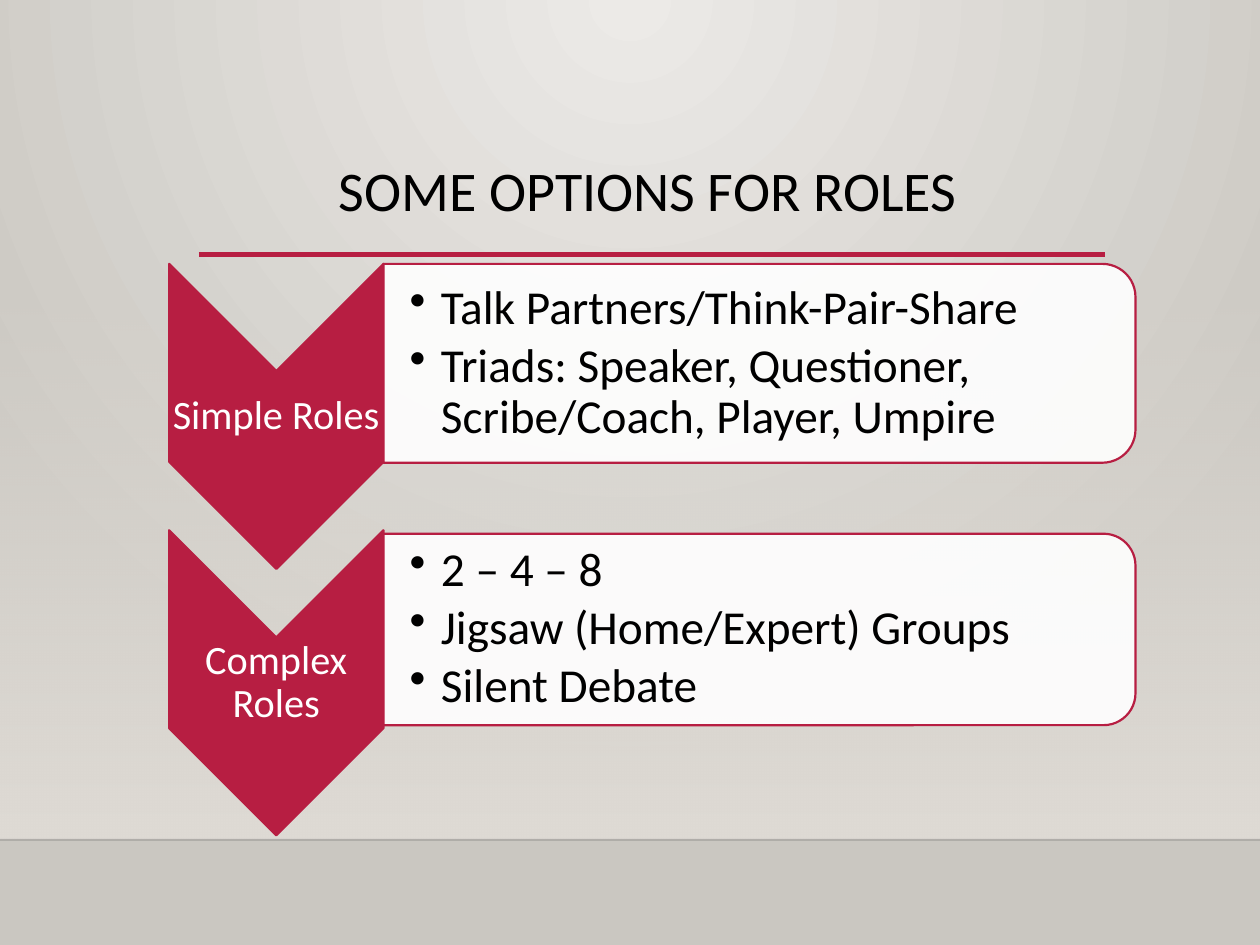
from dataclasses import dataclass

from lxml.etree import SubElement
from pptx import Presentation
from pptx.dml.color import RGBColor
from pptx.enum.shapes import MSO_CONNECTOR, MSO_SHAPE
from pptx.enum.text import MSO_ANCHOR, PP_ALIGN
from pptx.oxml import parse_xml
from pptx.oxml.ns import nsdecls, qn
from pptx.util import Cm, Pt


@dataclass(frozen=True)
class Theme:
    """Colours, font and type sizes of the slide."""
    accent: str = "B71E42"
    ink: str = "000000"
    rule: str = "000001"
    white: str = "FFFFFF"
    glow: str = "ECEAE7"
    floor: str = "CAC7C1"
    band: str = "DFDBD5"
    font: str = "Calibri"
    title: float = 32
    label: float = 23
    body: float = 27


THEME = Theme()


def rgb(value):
    """Return a colour from its hex value."""
    return RGBColor.from_string(value)


def set_alpha(element, percent):
    """Give the first colour inside an element an opacity."""
    colour = element.find(".//" + qn("a:srgbClr"))
    SubElement(colour, qn("a:alpha")).set("val", str(percent * 1000))


def set_gradient(fill, start, end):
    """Fill with a gradient of two colours, running downwards."""
    fill.gradient()
    fill.gradient_angle = 270
    for stop, colour in zip(fill.gradient_stops, (start, end)):
        stop.color.rgb = rgb(colour)


def add_line(page, left, top, width, colour, weight):
    """Draw a horizontal rule and return it."""
    line = page.shapes.add_connector(
        MSO_CONNECTOR.STRAIGHT, Cm(left), Cm(top), Cm(left + width), Cm(top))
    line.line.color.rgb = rgb(colour)
    line.line.width = Pt(weight)
    SubElement(line._element.spPr, qn("a:effectLst"))
    return line


def add_turned_shape(page, kind, box, fill):
    """Draw a shape turned a quarter so that it covers the given box."""
    left, top, width, height = box
    shape = page.shapes.add_shape(
        kind, Cm(left + (width - height) / 2), Cm(top + (height - width) / 2),
        Cm(height), Cm(width))
    shape.rotation = 90
    shape.shadow.inherit = False
    shape.fill.solid()
    shape.fill.fore_color.rgb = rgb(fill)
    shape.line.color.rgb = rgb(THEME.accent)
    shape.line.width = Pt(1.25)
    return shape


def add_text(page, box, lines, *, size, colour=THEME.ink, align=PP_ALIGN.LEFT,
             anchor=MSO_ANCHOR.MIDDLE, inset=0.05, left_inset=0.05,
             space_after=0, bullets=False):
    """Write paragraphs into a text box with the given format."""
    frame = page.shapes.add_textbox(*map(Cm, box)).text_frame
    frame.word_wrap = True
    frame.vertical_anchor = anchor
    frame.margin_left = Cm(left_inset)
    frame.margin_top = frame.margin_right = frame.margin_bottom = Cm(inset)
    for index, line in enumerate(lines):
        para = frame.paragraphs[0] if index == 0 else frame.add_paragraph()
        para.alignment = align
        para.line_spacing = 0.9
        para.space_after = Pt(space_after)
        if bullets:
            properties = para._p.get_or_add_pPr()
            properties.set("marL", str(Cm(0.63)))
            properties.set("indent", str(-Cm(0.63)))
            SubElement(properties, qn("a:buChar")).set("char", "•")
        span = para.add_run()
        span.text = line
        span.font.name = THEME.font
        span.font.size = Pt(size)
        span.font.color.rgb = rgb(colour)


def draw_backdrop(page, width, height):
    """Draw the glowing wall, its lower shade and the floor edge."""
    set_gradient(page.background.fill, THEME.glow, THEME.floor)
    gradient = page._element.find(".//" + qn("a:gradFill"))
    gradient.replace(gradient.find(qn("a:lin")), parse_xml(
        f'<a:path {nsdecls("a")} path="circle">'
        '<a:fillToRect l="43000" t="0" r="43000" b="100000"/></a:path>'))
    edge = 16.93
    top = 5.59
    shade = page.shapes.add_shape(
        MSO_SHAPE.RECTANGLE, 0, Cm(top), Cm(width), Cm(edge - top))
    shade.shadow.inherit = False
    shade.line.fill.background()
    set_gradient(shade.fill, THEME.band, THEME.band)
    set_alpha(shade._element.spPr, 0)
    line = add_line(page, 0, edge, width, THEME.rule, 1)
    set_alpha(line._element.spPr, 20)


def draw_heading(page, box, text):
    """Write the title with the accent rule below it."""
    left, top, width, height = box
    add_line(page, left + 2.31, top + 1.98, 18.26, THEME.accent, 2.5)
    add_text(page, box, [text], size=THEME.title, align=PP_ALIGN.CENTER,
             anchor=MSO_ANCHOR.TOP, inset=0.13, left_inset=0.25)


def draw_role_group(page, box, label, options, panel_top, panel_height):
    """Draw a labelled chevron and the panel of options beside it."""
    left, top, width, height = box
    arrow = 4.32
    add_turned_shape(page, MSO_SHAPE.CHEVRON, (left, top, arrow, height),
                     THEME.accent)
    add_text(page, (left, top + arrow / 2, arrow, height - arrow), [label],
             size=THEME.label, colour=THEME.white, align=PP_ALIGN.CENTER)
    panel_left = left + arrow
    panel_width = width - arrow
    panel = add_turned_shape(
        page, MSO_SHAPE.ROUND_2_SAME_RECTANGLE,
        (panel_left, top + panel_top, panel_width, panel_height), THEME.white)
    set_alpha(panel._element.spPr, 90)
    pad = 0.2
    add_text(page, (panel_left, top + panel_top + pad, panel_width - pad,
                    panel_height - 2 * pad), options, size=THEME.body,
             left_inset=0.53, space_after=4, bullets=True)


def main():
    """Build the slide and save it."""
    deck = Presentation()
    width, height = 25.4, 19.05
    deck.slide_width, deck.slide_height = Cm(width), Cm(height)
    page = deck.slides.add_slide(deck.slide_layouts[6])
    draw_backdrop(page, width, height)
    draw_heading(page, (1.7, 3.15, 22.6, 3.38), "SOME OPTIONS FOR ROLES")
    groups = [
        ("Simple Roles", ["Talk Partners/Think-Pair-Share",
                          "Triads: Speaker, Questioner, Scribe/Coach, Player, Umpire"],
         0, 4.01),
        ("Complex Roles", ["2 – 4 – 8", "Jigsaw (Home/Expert) Groups",
                           "Silent Debate"], 0.07, 3.86),
    ]
    for index, group in enumerate(groups):
        draw_role_group(page, (3.41, 5.32 + 5.37 * index, 19.48, 6.15), *group)
    deck.save("out.pptx")


if __name__ == "__main__":
    main()
